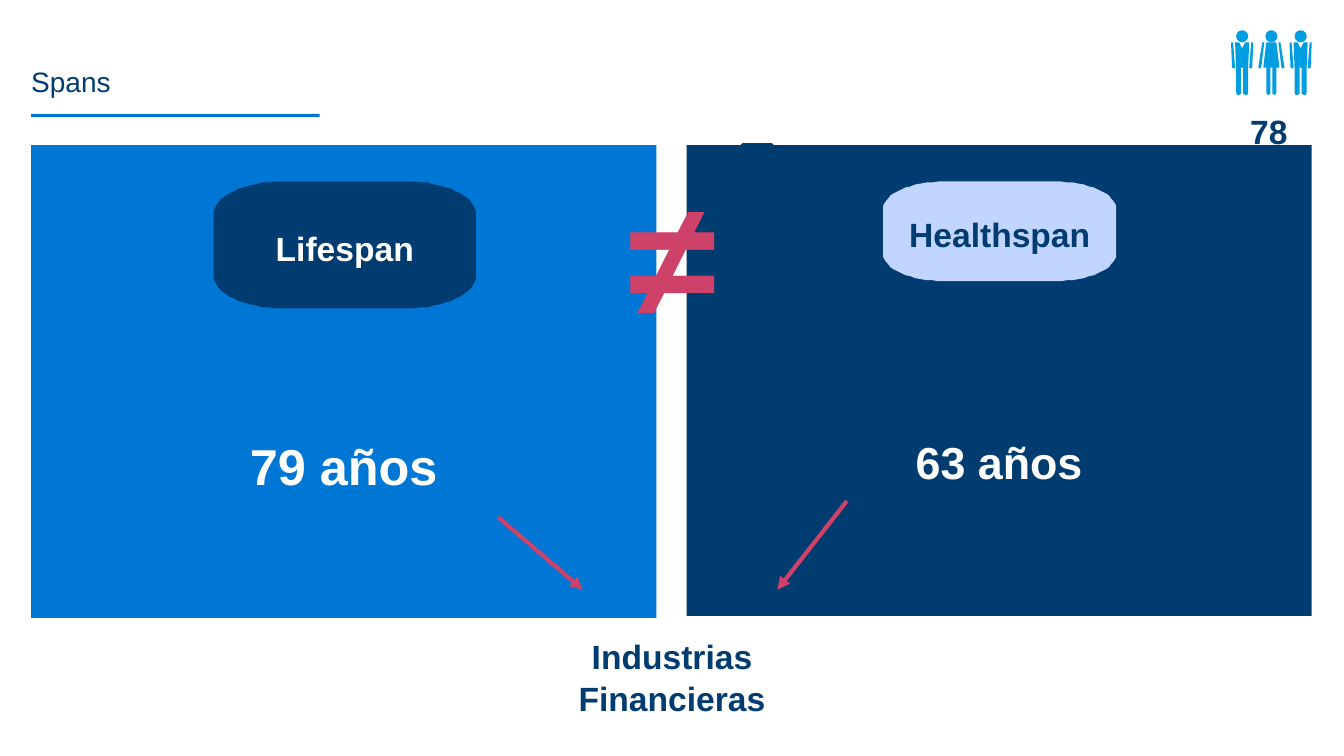
from math import cos, pi, sin

from lxml.etree import SubElement
from pptx import Presentation
from pptx.dml.color import RGBColor
from pptx.enum.shapes import MSO_CONNECTOR, MSO_SHAPE
from pptx.enum.text import MSO_ANCHOR, PP_ALIGN
from pptx.oxml.ns import qn
from pptx.util import Pt

PX = 9144  # 100 px to the inch
COLORS = {
    "navy": "003C70",
    "blue": "0077D4",
    "pale": "C1D5FF",
    "red": "CE4169",
    "sky": "009EE0",
    "white": "FFFFFF",
}


def rgb(name):
    return RGBColor.from_string(COLORS[name])


def write(shape, text, size=24, color="navy", bold=True, align=PP_ALIGN.CENTER,
          anchor=MSO_ANCHOR.TOP, top=0, spacing=1.04):
    frame = shape.text_frame
    frame.word_wrap = True
    frame.vertical_anchor = anchor
    frame.margin_left = frame.margin_right = frame.margin_bottom = 0
    frame.margin_top = top * PX
    paragraph = frame.paragraphs[0]
    paragraph.alignment = align
    paragraph.line_spacing = spacing
    run = paragraph.add_run()
    run.text = text
    font = run.font
    font.name, font.size, font.bold = "Arial", Pt(size), bold
    font.color.rgb = rgb(color)


def rounded_outline(left, top, width, height, rx, ry, steps=16):
    """Points of a rectangle whose corners are quarter ellipses."""
    corners = [(left + width - rx, top + height - ry), (left + rx, top + height - ry),
               (left + rx, top + ry), (left + width - rx, top + ry)]
    return [(cx + rx * cos(angle), cy + ry * sin(angle))
            for quarter, (cx, cy) in enumerate(corners)
            for angle in [(quarter + i / steps) * pi / 2 for i in range(steps + 1)]]


class SpansSlide:
    def __init__(self, slide):
        self.shapes = slide.shapes

    def paint(self, shape, color):
        shape.shadow.inherit = False
        shape.fill.solid()
        shape.fill.fore_color.rgb = rgb(color)
        shape.line.fill.background()
        return shape

    def block(self, left, top, width, height, color, kind=MSO_SHAPE.RECTANGLE):
        box = [n * PX for n in (left, top, width, height)]
        return self.paint(self.shapes.add_shape(kind, *box), color)

    def outline(self, points, color):
        builder = self.shapes.build_freeform(*points[0], scale=PX)
        builder.add_line_segments(points[1:], close=True)
        return self.paint(builder.convert_to_shape(), color)

    def label(self, left, top, width, height, text, **style):
        box = [n * PX for n in (left, top, width, height)]
        write(self.shapes.add_textbox(*box), text, **style)

    def arrow(self, x1, y1, x2, y2, color="red"):
        ends = [n * PX for n in (x1, y1, x2, y2)]
        connector = self.shapes.add_connector(MSO_CONNECTOR.STRAIGHT, *ends)
        connector.line.color.rgb = rgb(color)
        connector.line.width = Pt(3)
        SubElement(connector.line._get_or_add_ln(), qn("a:tailEnd"), type="triangle")
        SubElement(connector._element.spPr, qn("a:effectLst"))

    def person(self, center, half_body, arm):
        """Draw a figure from the left half of its body and its left arm."""
        mirrored = [(-x, y) for x, y in reversed(half_body)]
        self.outline([(center + x, y) for x, y in half_body + mirrored], "sky")
        for side in (1, -1):
            self.outline([(center + side * x, y) for x, y in arm], "sky")
        self.block(center - 6, 30, 12, 12, "sky", MSO_SHAPE.OVAL)


MAN_BODY = [(0, 48), (-3, 42), (-7, 42), (-6, 67), (-6, 92), (-5, 94),
            (-3, 94), (-1, 93), (-1, 67)]
MAN_ARM = [(-11, 42), (-10, 67), (-9, 68), (-8, 68), (-7, 67), (-9, 42)]
WOMAN_BODY = [(-5, 42), (-8, 67), (-5, 67), (-5, 92), (-4, 94), (-3, 94),
              (-1, 93), (-1, 67)]
WOMAN_ARM = [(-9, 42), (-13, 67), (-12, 68), (-11, 68), (-10, 67), (-7, 42)]


def main():
    presentation = Presentation()
    presentation.slide_width = 1333 * PX
    presentation.slide_height = 750 * PX
    spans = SpansSlide(presentation.slides.add_slide(presentation.slide_layouts[6]))

    spans.block(31, 113, 286, 3, "blue")

    healthspan_panel = spans.block(681, 144, 620, 467, "navy")
    write(healthspan_panel, "63 años", size=32, color="white", top=285)
    healthspan = spans.outline(rounded_outline(876, 180, 231, 99, 61, 27), "pale")
    write(healthspan, "Healthspan", anchor=MSO_ANCHOR.MIDDLE, top=4)
    spans.outline(rounded_outline(735, 142, 32, 4, 2, 2), "navy")

    lifespan_panel = spans.block(31, 144, 620, 469, "blue")
    write(lifespan_panel, "79 años", size=36, color="white", top=285)
    lifespan = spans.outline(rounded_outline(212, 180, 260, 126, 68, 33), "navy")
    write(lifespan, "Lifespan", color="white", anchor=MSO_ANCHOR.MIDDLE, top=4)

    spans.label(31, 30, 1270, 67, "Spans", size=20, bold=False, align=PP_ALIGN.LEFT,
                anchor=MSO_ANCHOR.BOTTOM, spacing=1)
    spans.label(601, 147, 132, 51, "≠", size=115, color="red")

    spans.arrow(494, 513, 578, 585)
    spans.arrow(840, 497, 771, 585)
    spans.label(554, 629, 225, 109, "Industrias Financieras")

    spans.person(1232, MAN_BODY, MAN_ARM)
    spans.person(1261, WOMAN_BODY, WOMAN_ARM)
    spans.person(1290, MAN_BODY, MAN_ARM)
    spans.label(1218, 108, 81, 46, "78")

    presentation.save("out.pptx")


if __name__ == "__main__":
    main()
